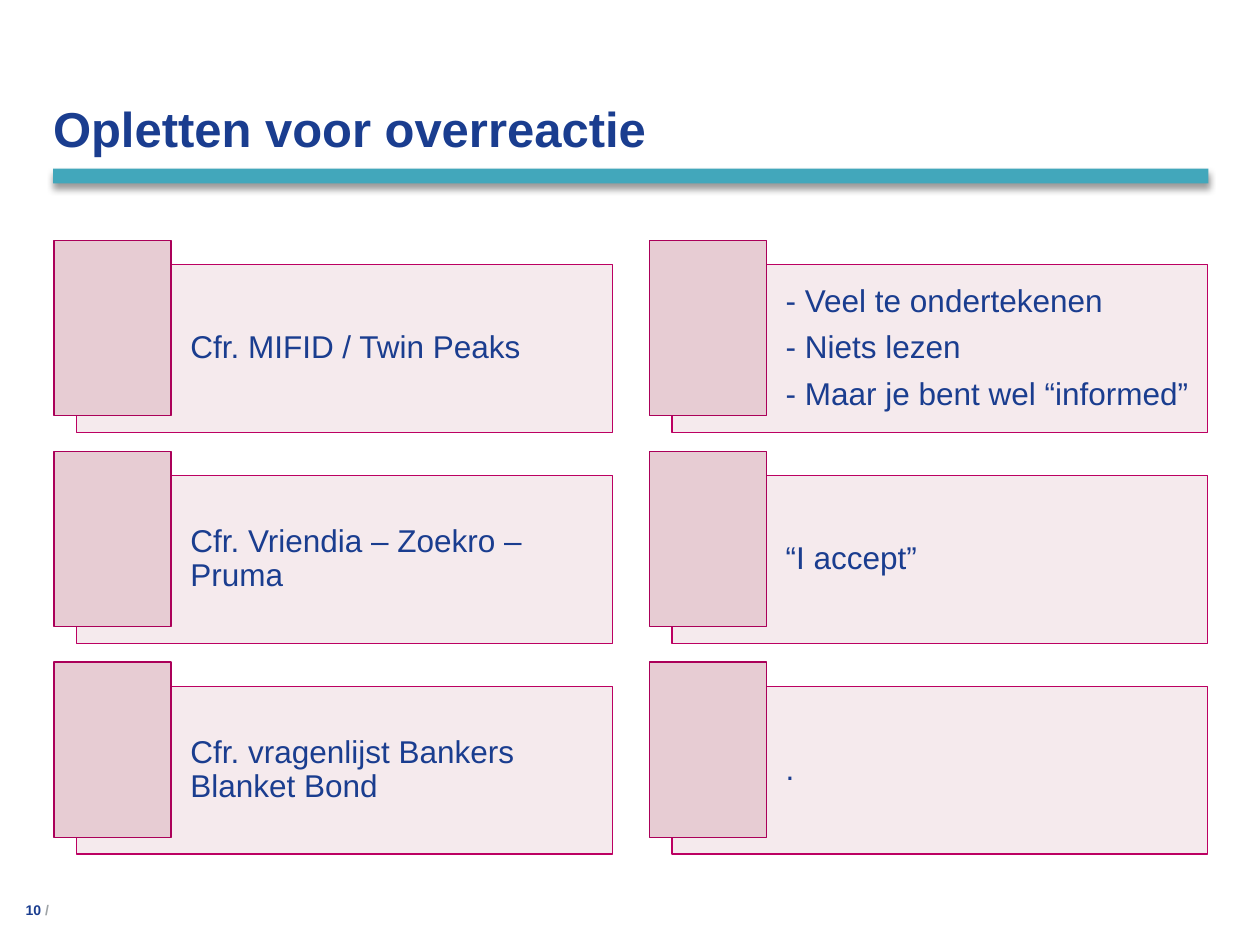
import dataclasses
import itertools
import pptx
import pptx.util
import pptx.dml.color
import pptx.enum.shapes
import pptx.enum.text
import pptx.oxml
import pptx.oxml.ns

Cm, Pt = pptx.util.Cm, pptx.util.Pt
RGB = pptx.dml.color.RGBColor.from_string
ALIGN = pptx.enum.text.PP_ALIGN
ANCHOR = pptx.enum.text.MSO_ANCHOR
RECT = pptx.enum.shapes.MSO_SHAPE.RECTANGLE
NS = pptx.oxml.ns.nsdecls("a")


@dataclasses.dataclass
class Theme:
    font: str = "Arial"
    navy: str = "1A3D8F"
    gray: str = "9EA3A6"
    teal: str = "42A7BB"
    rose: str = "E7CCD3"
    edge: str = "BC0062"
    dark: str = "AB0059"
    head: int = 28
    body: int = 18
    foot: int = 8


def write(frame, lines, size, font, color, bold=False, align=ALIGN.LEFT,
          anchor=ANCHOR.MIDDLE, inset=(0, 0, 0, 0), spacing=None, after=0):
    """Fill a frame; each line is a string or a list of (text, bold, color)."""
    frame.word_wrap = True
    frame.auto_size = pptx.enum.text.MSO_AUTO_SIZE.NONE
    frame.vertical_anchor = anchor
    (frame.margin_left, frame.margin_top,
     frame.margin_right, frame.margin_bottom) = map(Cm, inset)
    for i, line in enumerate(lines):
        para = frame.add_paragraph() if i else frame.paragraphs[0]
        para.alignment = align
        para.space_before, para.space_after = Pt(0), Pt(after)
        para.line_spacing = spacing
        runs = [(line, bold, color)] if isinstance(line, str) else line
        for text, heavy, tint in runs:
            run = para.add_run()
            run.text = text
            run.font.name, run.font.size = font, Pt(size)
            run.font.bold = heavy
            run.font.color.rgb = RGB(tint)


class Page:
    def __init__(self, slide, theme):
        self.slide, self.theme = slide, theme

    def title(self, text, *box):
        t, shape = self.theme, self.slide.shapes.title
        shape.left, shape.top, shape.width, shape.height = map(Cm, box)
        write(shape.text_frame, [text], t.head, t.font, t.navy,
              bold=True, anchor=ANCHOR.BOTTOM)

    def rect(self, *box, fill, line=None, width=0.75, alpha=None):
        shape = self.slide.shapes.add_shape(RECT, *map(Cm, box))
        shape.shadow.inherit = False
        shape.fill.solid()
        shape.fill.fore_color.rgb = RGB(fill)
        if alpha:
            tint = shape.fill._xPr.find(".//" + pptx.oxml.ns.qn("a:srgbClr"))
            tint.append(pptx.oxml.parse_xml(
                f'<a:alpha {NS} val="{alpha * 1000}"/>'))
        if line:
            shape.line.color.rgb = RGB(line)
            shape.line.width = Pt(width)
        else:
            shape.line.fill.background()
        return shape

    def rule(self, *box):
        """Draw the title bar with its soft shadow below."""
        shape = self.rect(*box, fill=self.theme.teal)
        glow = shape._element.spPr.find(pptx.oxml.ns.qn("a:effectLst"))
        glow.append(pptx.oxml.parse_xml(
            f'<a:outerShdw {NS} blurRad="{Pt(4)}" dist="{Pt(3)}" '
            'dir="5400000" algn="t" rotWithShape="0"><a:srgbClr val="000000">'
            '<a:alpha val="40000"/></a:srgbClr></a:outerShdw>'))

    def card(self, left, top, lines):
        """Draw a text panel with a darker tab over its upper left corner."""
        t = self.theme
        panel = self.rect(left + 0.46, top + 0.49, 10.8, 3.38,
                          fill=t.rose, line=t.edge, alpha=40)
        write(panel.text_frame, lines, t.body, t.font, t.navy,
              inset=(2.29, 0.18, 0.18, 0.18), spacing=0.9, after=7)
        self.rect(left, top, 2.36, 3.53, fill=t.rose, line=t.dark, width=0.85)

    def number(self, text, *box):
        t = self.theme
        shape = self.slide.shapes.add_textbox(*map(Cm, box))
        write(shape.text_frame,
              [[(text, True, t.navy), (" / ", True, t.gray)]],
              t.foot, t.font, t.navy, align=ALIGN.RIGHT, anchor=ANCHOR.BOTTOM)


CARDS = [
    ["Cfr. MIFID / Twin Peaks"],
    ["- Veel te ondertekenen", "- Niets lezen",
     "- Maar je bent wel “informed”"],
    ["Cfr. Vriendia – Zoekro – Pruma"],
    ["“I accept”"],
    ["Cfr. vragenlijst Bankers Blanket Bond"],
    ["."],
]


def main():
    deck = pptx.Presentation()
    deck.slide_width, deck.slide_height = Cm(25.4), Cm(19.05)
    page = Page(deck.slides.add_slide(deck.slide_layouts[5]), Theme())
    page.rule(1.07, 3.4, 23.29, 0.3)
    page.title("Opletten voor overreactie", 1.07, 0.53, 23.29, 2.64)
    page.number("10", 0, 18.03, 1.07, 0.48)
    cells = itertools.product(range(3), range(2))
    for (row, col), lines in zip(cells, CARDS):
        page.card(1.09 + col * 12, 4.85 + row * 4.25, lines)
    deck.save("out.pptx")


if __name__ == "__main__":
    main()
